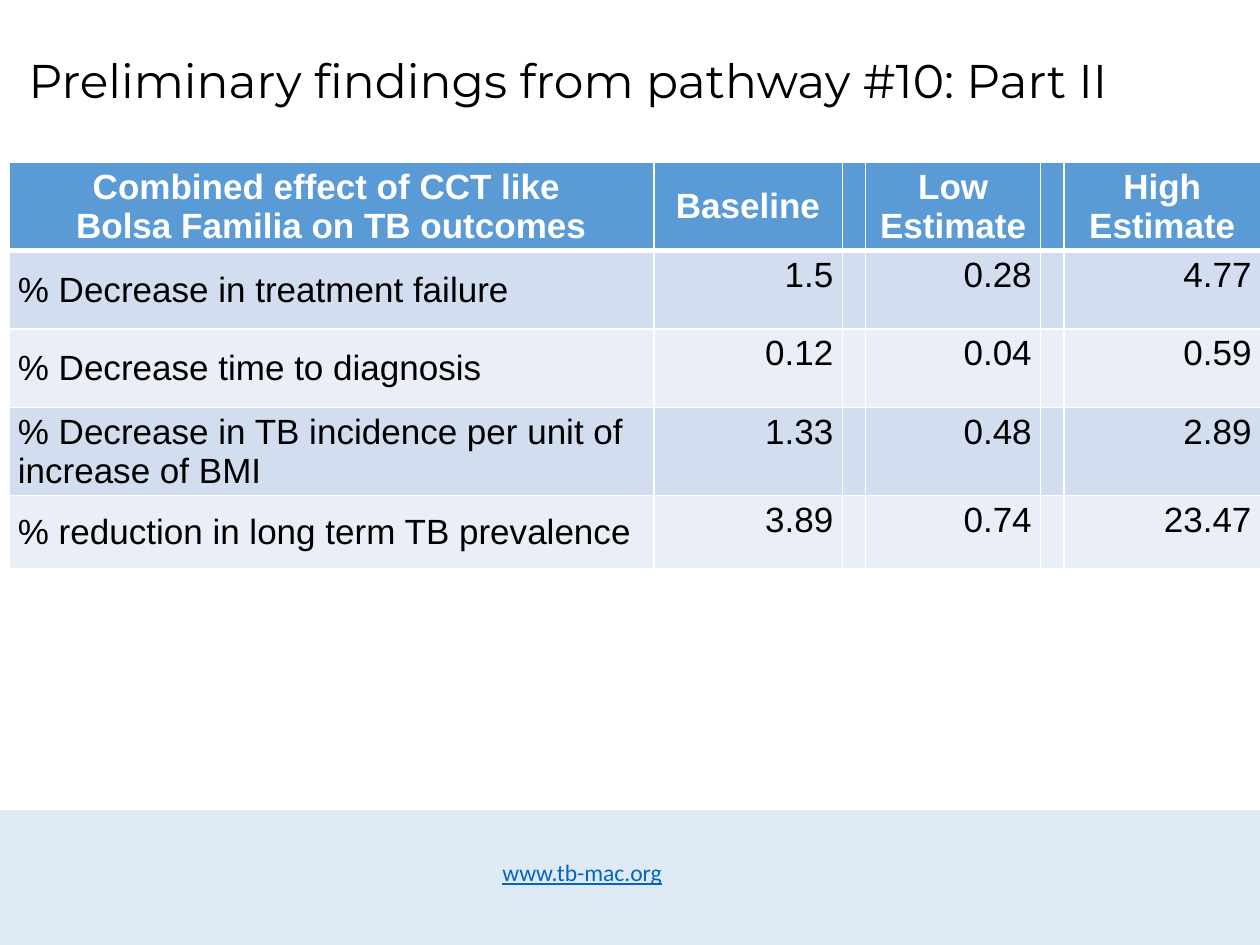
from dataclasses import dataclass

from lxml import etree
from pptx import Presentation
from pptx.dml.color import RGBColor
from pptx.enum.shapes import MSO_SHAPE
from pptx.enum.text import MSO_ANCHOR, PP_ALIGN
from pptx.oxml.ns import qn
from pptx.util import Cm, Pt

RECTANGLE = MSO_SHAPE.RECTANGLE
TOP, MIDDLE = MSO_ANCHOR.TOP, MSO_ANCHOR.MIDDLE
LEFT, CENTER, RIGHT = PP_ALIGN.LEFT, PP_ALIGN.CENTER, PP_ALIGN.RIGHT

WHITE, BLACK = "FFFFFF", "000000"
HEADER_FILL = "5B9BD5"
BAND_FILLS = ("D2DEEF", "EAEFF7")
COLUMN_WIDTHS = (13, 3.8, 0.47, 3.53, 0.47, 3.96)
ROW_HEIGHTS = (1.73, 1.58, 1.58, 1.47, 1.47, 0.64)
VALUE_COLUMNS = (1, 3, 5)
HEADINGS = ("Baseline", "Low Estimate", "High Estimate")
VERTICAL_MARGINS = {TOP: 0.1, MIDDLE: 0.04}


@dataclass(frozen=True)
class Outcome:
    label: str
    values: tuple[str, str, str]


@dataclass(frozen=True)
class Caption:
    text: str
    box: tuple[float, float, float, float]
    font_name: str
    size: float
    color: str
    anchor: MSO_ANCHOR = TOP
    wrap: bool = True
    underline: bool = False
    line_spacing: float = 1.0


OUTCOMES = (
    Outcome("% Decrease in treatment failure", ("1.5", "0.28", "4.77")),
    Outcome("% Decrease time to diagnosis", ("0.12", "0.04", "0.59")),
    Outcome("% Decrease in TB incidence per unit of increase of BMI",
            ("1.33", "0.48", "2.89")),
    Outcome("% reduction in long term TB prevalence", ("3.89", "0.74", "23.47")),
)
CAPTIONS = (
    Caption("www.tb-mac.org", (9.88, 17.17, 3.76, 0.84), "Calibri", 13.5,
            "0563C1", wrap=False, underline=True),
    Caption("Preliminary findings from pathway #10: Part II",
            (0.33, 0.53, 25.04, 2.31), "Montserrat", 27, BLACK,
            anchor=MIDDLE, line_spacing=0.9),
)


def rgb(value: str) -> RGBColor:
    return RGBColor.from_string(value)


def paint(fill, color: str) -> None:
    fill.solid()
    fill.fore_color.rgb = rgb(color)


def set_font(paragraph, name: str, size: float, color: str, bold: bool = False) -> None:
    paragraph.font.name = name
    paragraph.font.size = Pt(size)
    paragraph.font.bold = bold
    paragraph.font.color.rgb = rgb(color)


def add_caption(slide, caption: Caption) -> None:
    frame = slide.shapes.add_textbox(*map(Cm, caption.box)).text_frame
    frame.word_wrap = caption.wrap
    frame.vertical_anchor = caption.anchor
    paragraph = frame.paragraphs[0]
    paragraph.text = caption.text
    paragraph.line_spacing = caption.line_spacing
    set_font(paragraph, caption.font_name, caption.size, caption.color)
    paragraph.font.underline = caption.underline


def set_margins(cell, horizontal: float, vertical: float) -> None:
    cell.margin_left = cell.margin_right = Cm(horizontal)
    cell.margin_top = cell.margin_bottom = Cm(vertical)


def add_bottom_border(cell, color: str, width: float) -> None:
    border = etree.Element(qn("a:lnB"), w=str(Pt(width)))
    solid = etree.SubElement(border, qn("a:solidFill"))
    etree.SubElement(solid, qn("a:srgbClr"), val=color)
    cell._tc.get_or_add_tcPr().insert(0, border)


def write_cell(cell, text: str, align: PP_ALIGN, anchor: MSO_ANCHOR,
               color: str = BLACK, bold: bool = False) -> None:
    set_margins(cell, 0.18, VERTICAL_MARGINS[anchor])
    cell.vertical_anchor = anchor
    cell.text_frame.text = text
    for paragraph in cell.text_frame.paragraphs:
        paragraph.alignment = align
        set_font(paragraph, "Arial", 20, color, bold)


def add_findings(slide) -> None:
    findings = slide.shapes.add_table(
        len(ROW_HEIGHTS), len(COLUMN_WIDTHS), Cm(0.18), Cm(3.28),
        Cm(sum(COLUMN_WIDTHS)), Cm(sum(ROW_HEIGHTS))).table
    for column, width in zip(findings.columns, COLUMN_WIDTHS):
        column.width = Cm(width)
    for row, height in zip(findings.rows, ROW_HEIGHTS):
        row.height = Cm(height)

    row_fills = (HEADER_FILL, *BAND_FILLS * 2)
    for row, color in zip(findings.rows, row_fills):
        for cell in row.cells:
            set_margins(cell, 0, 0)
            paint(cell.fill, color)
    for cell in findings.rows[0].cells:
        add_bottom_border(cell, WHITE, 3)

    title = "Combined effect of CCT like \nBolsa Familia on TB outcomes"
    write_cell(findings.cell(0, 0), title, CENTER, MIDDLE, WHITE, True)
    for column, heading in zip(VALUE_COLUMNS, HEADINGS):
        write_cell(findings.cell(0, column), heading, CENTER, MIDDLE, WHITE, True)

    for row, outcome in enumerate(OUTCOMES, start=1):
        write_cell(findings.cell(row, 0), outcome.label, LEFT, MIDDLE)
        for column, value in zip(VALUE_COLUMNS, outcome.values):
            write_cell(findings.cell(row, column), value, RIGHT, TOP)

    last_row = len(ROW_HEIGHTS) - 1
    for cell in findings.rows[last_row].cells:
        set_margins(cell, 0, 0)
        cell.fill.background()
    findings.cell(last_row, 0).merge(findings.cell(last_row, len(COLUMN_WIDTHS) - 1))


def main() -> None:
    deck = Presentation()
    deck.slide_width, deck.slide_height = Cm(25.4), Cm(19.05)
    slide = deck.slides.add_slide(deck.slide_layouts[6])

    footer = slide.shapes.add_shape(RECTANGLE, Cm(0), Cm(16.33), Cm(25.4), Cm(2.72))
    footer.shadow.inherit = False
    paint(footer.fill, "DEEBF7")
    footer.line.fill.background()

    for caption in CAPTIONS:
        add_caption(slide, caption)
    add_findings(slide)
    deck.save("out.pptx")


if __name__ == "__main__":
    main()
